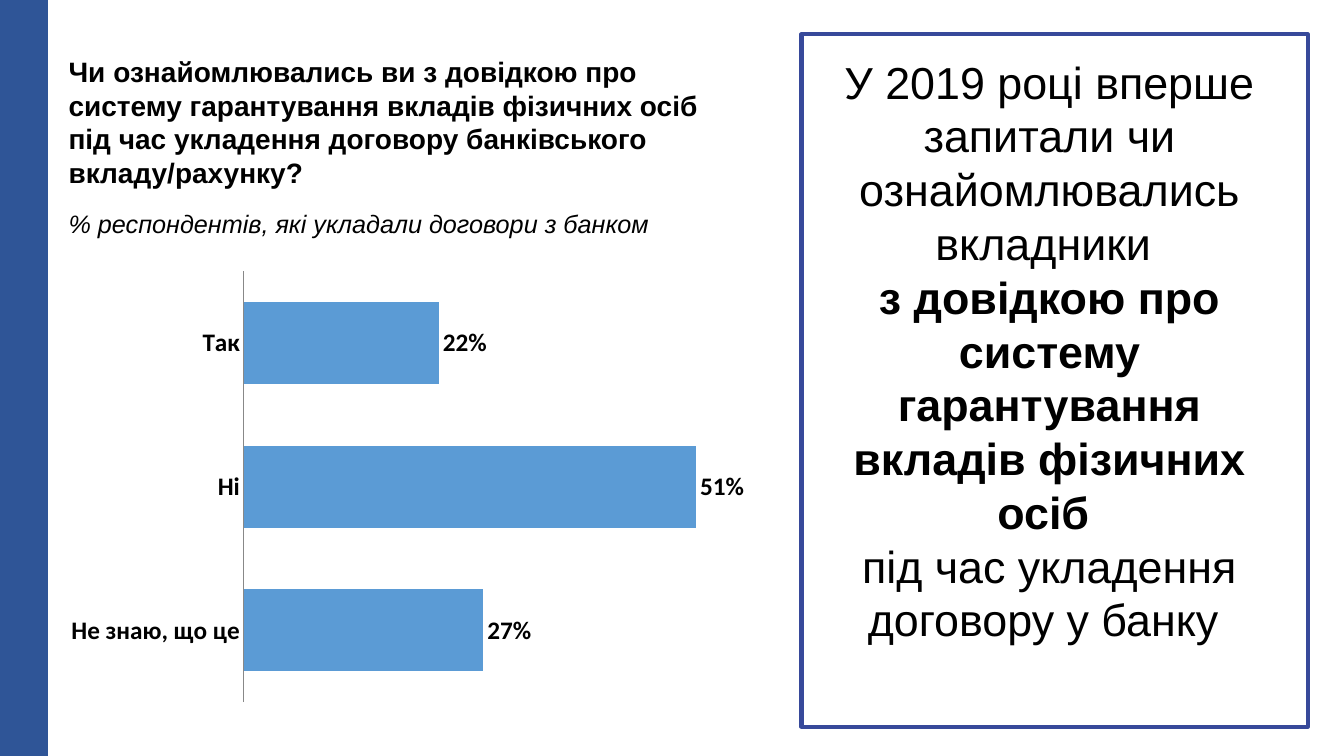
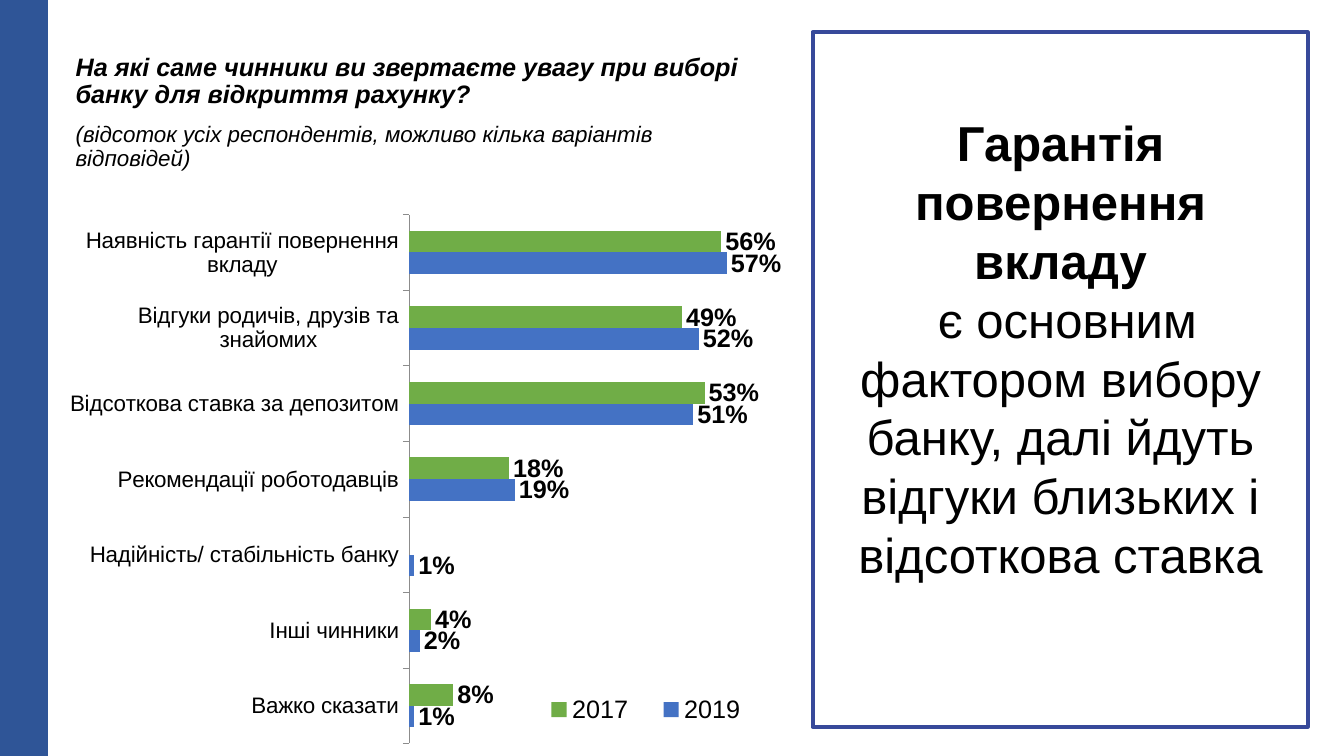
from dataclasses import dataclass

from lxml.etree import SubElement
from pptx import Presentation
from pptx.chart.data import CategoryChartData
from pptx.dml.color import RGBColor
from pptx.enum.chart import XL_CHART_TYPE, XL_LABEL_POSITION, XL_LEGEND_POSITION, XL_TICK_MARK
from pptx.enum.shapes import MSO_SHAPE
from pptx.enum.text import MSO_ANCHOR, MSO_AUTO_SIZE, PP_ALIGN
from pptx.oxml.ns import qn
from pptx.util import Inches, Pt


@dataclass(frozen=True)
class Theme:
    width: float = 13.33
    height: float = 7.5
    band_width: float = 0.47
    font: str = "Arial"
    text: str = "000000"
    band: str = "2F5597"
    frame: str = "37499A"
    label_size: int = 18


THEME = Theme()

# Content: paragraphs are (text, style); boxes are left, top, width, height in inches;
# plot and legend areas are shares of the chart box
SLIDES = [
    {
        "title": [
            ("Чи ознайомлювались ви з довідкою про", {"size": 20, "bold": True}),
            ("систему гарантування вкладів фізичних осіб", {"size": 20, "bold": True}),
            ("під час укладення договору банківського вкладу/рахунку?", {"size": 20, "bold": True}),
            ("% респондентів, які укладали договори з банком",
             {"size": 18, "italic": True, "before": 14}),
        ],
        "title_box": (0.58, 0.49, 7.37, 1.95),
        "frame_box": (7.95, 0.34, 5.02, 6.87),
        "message": [
            ("У 2019 році вперше запитали чи ознайомлювались вкладники ", {"size": 32}),
            ("з довідкою про систему гарантування вкладів фізичних осіб ",
             {"size": 32, "bold": True}),
            ("під час укладення договору у банку ", {"size": 32}),
        ],
        "message_box": (8.06, 0.49, 4.7, 6.02),
        "chart": {
            "box": (0.57, 2.61, 7.28, 4.44),
            "plot": (0.254, 0.018, 0.725, 0.963),
            "categories": ["Так", "Нi", "Не знаю, що це"],
            "series": [("Series 1", [0.22, 0.51, 0.27], "5B9BD5")],
            "gap": 75, "overlap": -10, "top_down": True,
            "format": "###0%", "label_font": "Calibri",
            "axis_font": "Calibri", "axis_size": 18, "axis_bold": True,
            "axis_line": ("888888", 0.75), "tick": XL_TICK_MARK.NONE,
        },
    },
    {
        "title": [
            ("На які саме чинники ви звертаєте увагу при виборі банку для відкриття рахунку?",
             {"size": 18, "bold": True, "italic": True, "before": 10, "spacing": 0.9}),
            ("(відсоток усіх респондентів, можливо кілька варіантів відповідей)",
             {"size": 16, "italic": True, "before": 10, "spacing": 0.9}),
        ],
        "title_box": (0.65, 0.49, 7.01, 1.64),
        "frame_box": (8.06, 0.32, 4.91, 6.89),
        "message": [
            ("Гарантія повернення вкладу", {"size": 35, "bold": True}),
            (" є основним фактором вибору банку, далі йдуть відгуки близьких і відсоткова ставка",
             {"size": 35}),
        ],
        "message_box": (8.17, 1.07, 4.7, 4.81),
        "chart": {
            "box": (0.47, 1.76, 7.76, 5.62),
            "plot": (0.462, 0.066, 0.428, 0.934),
            "legend": (0.61, 0.9, 0.31, 0.08),
            "categories": [
                "Важко сказати", "Інші чинники", "Надійність/ стабільність банку",
                "Рекомендації роботодавців", "Відсоткова ставка за депозитом",
                "Відгуки родичів, друзів та знайомих", "Наявність гарантії повернення вкладу",
            ],
            "series": [
                ("2019", [0.01, 0.02, 0.01, 0.19, 0.51, 0.52, 0.57], "4472C4"),
                ("2017", [0.08, 0.04, None, 0.18, 0.53, 0.49, 0.56], "70AD47"),
            ],
            "gap": 150, "overlap": 0, "top_down": False,
            "format": "0%", "label_font": "Arial",
            "axis_font": "Arial", "axis_size": 16, "axis_bold": False,
            "axis_line": ("8C8C8C", 0.5), "tick": XL_TICK_MARK.OUTSIDE,
        },
    },
]


def color(value):
    return RGBColor.from_string(value)


def inches(box):
    return [Inches(length) for length in box]


def set_font(font, size, bold=False, italic=False, name=THEME.font):
    font.name, font.size, font.bold, font.italic = name, Pt(size), bold, italic
    font.color.rgb = color(THEME.text)


def write(frame, paragraphs, align):
    frame.word_wrap = True
    frame.auto_size = MSO_AUTO_SIZE.NONE
    frame.vertical_anchor = MSO_ANCHOR.TOP
    for index, (text, style) in enumerate(paragraphs):
        paragraph = frame.add_paragraph() if index else frame.paragraphs[0]
        paragraph.text = text
        paragraph.alignment = align
        paragraph.space_before = Pt(style.get("before", 0))
        paragraph.line_spacing = style.get("spacing", 1.0)
        set_font(paragraph.font, style["size"], style.get("bold", False),
                 style.get("italic", False))


def add_rectangle(slide, box, line, line_width, fill=None):
    rectangle = slide.shapes.add_shape(MSO_SHAPE.RECTANGLE, *inches(box))
    rectangle.shadow.inherit = False
    rectangle.line.color.rgb = color(line)
    rectangle.line.width = Pt(line_width)
    if fill:
        rectangle.fill.solid()
        rectangle.fill.fore_color.rgb = color(fill)
    else:
        rectangle.fill.background()


def place(parent, position, area, inner=False):
    """Give a plot area or legend a fixed place inside its chart."""
    for old in parent.findall(qn("c:layout")):
        parent.remove(old)
    layout = SubElement(parent, qn("c:layout"))
    parent.insert(position, layout)
    manual = SubElement(layout, qn("c:manualLayout"))
    settings = [("layoutTarget", "inner")] if inner else []
    settings += [("xMode", "edge"), ("yMode", "edge")]
    settings += zip("xywh", area)
    for tag, value in settings:
        SubElement(manual, qn(f"c:{tag}")).set("val", str(value))


def add_bar_chart(slide, content):
    data = CategoryChartData(number_format=content["format"])
    data.categories = content["categories"]
    for name, values, _ in content["series"]:
        data.add_series(name, values)
    chart = slide.shapes.add_chart(
        XL_CHART_TYPE.BAR_CLUSTERED, *inches(content["box"]), data).chart
    chart.has_title = False
    set_font(chart.font, THEME.label_size, name=content["label_font"])

    # Axes
    axis = chart.category_axis
    axis.reverse_order = content["top_down"]
    axis.has_major_gridlines = False
    axis.major_tick_mark = content["tick"]
    axis.minor_tick_mark = XL_TICK_MARK.NONE
    set_font(axis.tick_labels.font, content["axis_size"], content["axis_bold"],
             name=content["axis_font"])
    line_color, line_width = content["axis_line"]
    axis.format.line.color.rgb = color(line_color)
    axis.format.line.width = Pt(line_width)
    scale = chart.value_axis
    scale.minimum_scale, scale.maximum_scale = 0, 0.6
    scale.has_major_gridlines = False
    scale.visible = False

    # Bars and their labels
    plot = chart.plots[0]
    plot.gap_width, plot.overlap = content["gap"], content["overlap"]
    plot.vary_by_categories = False
    for series, (_, _, fill) in zip(plot.series, content["series"]):
        series.invert_if_negative = False
        series.format.fill.solid()
        series.format.fill.fore_color.rgb = color(fill)
        labels = series.data_labels
        labels.show_value = True
        labels.position = XL_LABEL_POSITION.OUTSIDE_END
        labels.number_format = content["format"]
        labels.number_format_is_linked = False
        set_font(labels.font, THEME.label_size, True, name=content["label_font"])
    plot_area = next(chart.element.iter(qn("c:plotArea")))
    place(plot_area, 0, content["plot"], inner=True)

    # Legend
    chart.has_legend = "legend" in content
    if chart.has_legend:
        chart.legend.position = XL_LEGEND_POSITION.RIGHT
        chart.legend.include_in_layout = False
        set_font(chart.legend.font, THEME.label_size)
        place(next(chart.element.iter(qn("c:legend"))), 1, content["legend"])


def add_slide(deck, content):
    slide = deck.slides.add_slide(deck.slide_layouts[5])
    add_rectangle(slide, (0, 0, THEME.band_width, THEME.height), THEME.band, 1, THEME.band)

    # Question
    title = slide.shapes.title
    title.left, title.top, title.width, title.height = inches(content["title_box"])
    write(title.text_frame, content["title"], PP_ALIGN.LEFT)

    # Framed message
    add_rectangle(slide, content["frame_box"], THEME.frame, 3)
    message = slide.shapes.add_textbox(*inches(content["message_box"]))
    write(message.text_frame, content["message"], PP_ALIGN.CENTER)

    add_bar_chart(slide, content["chart"])


def main():
    deck = Presentation()
    deck.slide_width, deck.slide_height = Inches(THEME.width), Inches(THEME.height)
    for content in SLIDES:
        add_slide(deck, content)
    deck.save("out.pptx")


if __name__ == "__main__":
    main()
